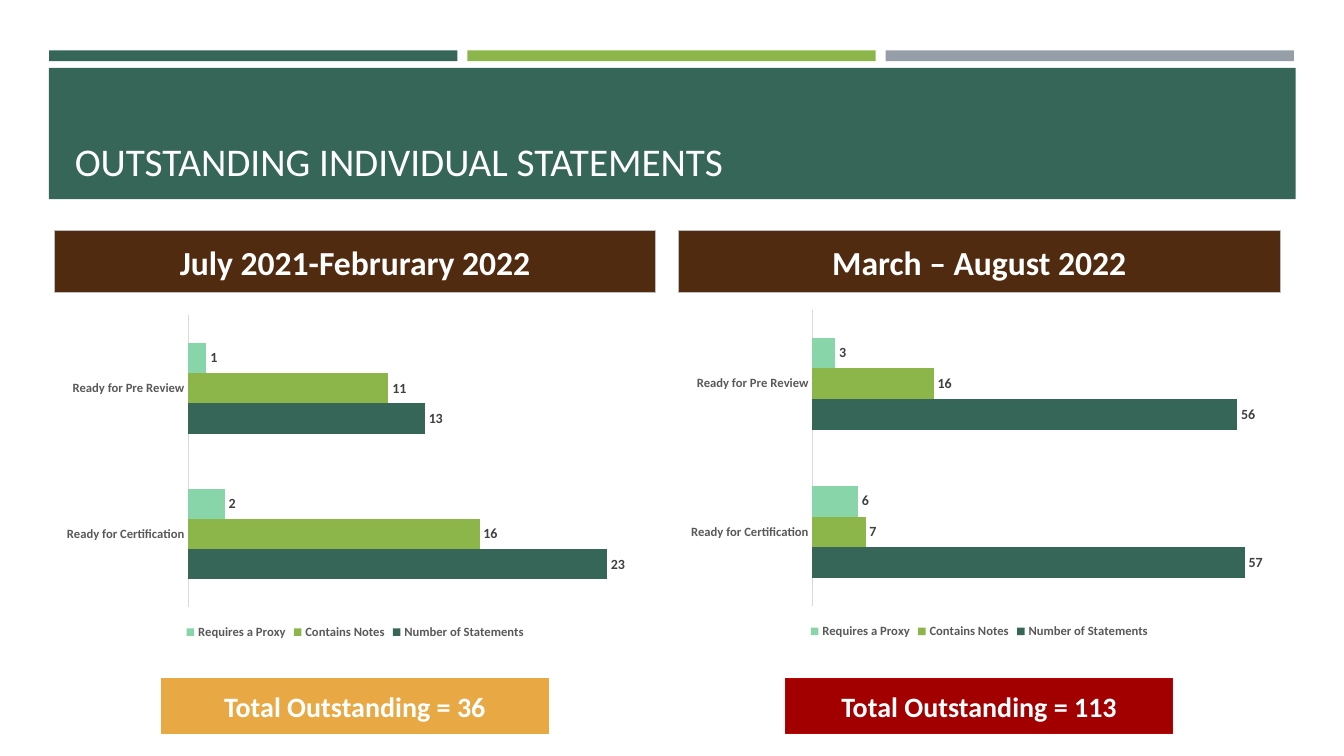
from lxml import etree
from pptx import Presentation
from pptx.chart.data import CategoryChartData
from pptx.dml.color import RGBColor
from pptx.enum.chart import XL_CHART_TYPE, XL_LABEL_POSITION, XL_LEGEND_POSITION, XL_TICK_LABEL_POSITION, XL_TICK_MARK
from pptx.enum.shapes import MSO_SHAPE
from pptx.enum.text import MSO_ANCHOR, PP_ALIGN
from pptx.oxml import parse_xml
from pptx.util import Cm, Pt

COLORS = {
    "green": "366658", "lime": "8CB64A", "mint": "88D5A9", "gray": "969FA7",
    "brown": "502B10", "amber": "E8A844", "red": "A20000", "red_line": "C00000",
    "silver": "BDBDBD", "axis": "D9D9D9", "label": "404040", "muted": "595959",
    "white": "FFFFFF",
}
FONT = "Calibri"


def set_font(font, size, color, bold=True):
    font.name, font.size, font.bold = FONT, Pt(size), bold
    font.color.rgb = RGBColor.from_string(COLORS[color])


def add_box(x, y, w, h, fill, line=None, text="", size=20):
    sp = s.shapes.add_shape(MSO_SHAPE.RECTANGLE, Cm(x), Cm(y), Cm(w), Cm(h))
    sp.shadow.inherit = False
    sp.fill.solid()
    sp.fill.fore_color.rgb = RGBColor.from_string(COLORS[fill])
    if line:
        sp.line.color.rgb = RGBColor.from_string(COLORS[line])
        sp.line.width = Pt(0.75)
    else:
        sp.line.fill.background()
    if text:
        tf = sp.text_frame
        tf.text = text
        tf.vertical_anchor = MSO_ANCHOR.MIDDLE
        p = tf.paragraphs[0]
        p.alignment = PP_ALIGN.CENTER
        set_font(p.runs[0].font, size, "white")


prs = Presentation()
prs.slide_width, prs.slide_height = Cm(33.87), Cm(19.05)
s = prs.slides.add_slide(prs.slide_layouts[5])

# Header strips and title band
for i, color in enumerate(["green", "lime", "gray"]):
    add_box(1.24 + i * 10.54, 1.27, 10.29, 0.27, color)
add_box(1.23, 1.71, 31.42, 3.31, "green")

# Title, raised above the band
title = s.shapes.title
title.left, title.top, title.width, title.height = Cm(1.63), Cm(1.96), Cm(30.63), Cm(2.82)
tf = title.text_frame
tf.text = "OUTSTANDING INDIVIDUAL STATEMENTS"
tf.vertical_anchor = MSO_ANCHOR.BOTTOM
tf.paragraphs[0].alignment = PP_ALIGN.LEFT
set_font(tf.paragraphs[0].runs[0].font, 28, "white", bold=False)
s.shapes._spTree.append(title._element)

# One column per period: heading, chart, total
CATEGORIES = ["Ready for Certification", "Ready for Pre Review"]
SERIES = [("Number of Statements", "green"), ("Contains Notes", "lime"), ("Requires a Proxy", "mint")]
PERIODS = [
    dict(x=1.37, heading="July 2021-Februrary 2022", values=[(23, 13), (16, 11), (2, 1)],
         top=7.77, height=8.46, maximum=25, total="Total Outstanding = 36", fill="amber", line="amber"),
    dict(x=17.1, heading="March – August 2022", values=[(57, 56), (7, 16), (6, 3)],
         top=7.62, height=8.59, maximum=60, total="Total Outstanding = 113", fill="red", line="red_line"),
]
WIDTH = 15.16

for period in PERIODS:
    x = period["x"]
    add_box(x, 5.82, WIDTH, 1.55, "brown", "silver", period["heading"], 24)
    add_box(x + 2.7, 17.09, 9.75, 1.4, period["fill"], period["line"], period["total"])

    data = CategoryChartData()
    data.categories = CATEGORIES
    for (name, color), values in zip(SERIES, period["values"]):
        data.add_series(name, values)
    chart = s.shapes.add_chart(XL_CHART_TYPE.BAR_CLUSTERED, Cm(x), Cm(period["top"]),
                               Cm(WIDTH), Cm(period["height"]), data).chart
    chart.has_title = False
    chart.font.name, chart.font.size = FONT, Pt(10)

    # Legend and axes
    chart.has_legend = True
    chart.legend.position = XL_LEGEND_POSITION.BOTTOM
    chart.legend.include_in_layout = False
    set_font(chart.legend.font, 9, "muted")
    axis = chart.category_axis
    axis.major_tick_mark = axis.minor_tick_mark = XL_TICK_MARK.NONE
    axis.tick_label_position = XL_TICK_LABEL_POSITION.NEXT_TO_AXIS
    axis.format.line.color.rgb = RGBColor.from_string(COLORS["axis"])
    axis.format.line.width = Pt(0.75)
    set_font(axis.tick_labels.font, 9, "muted")
    chart.value_axis.minimum_scale = 0
    chart.value_axis.maximum_scale = period["maximum"]
    chart.value_axis.has_major_gridlines = False
    chart.value_axis.visible = False

    # Bars and value labels
    plot = chart.plots[0]
    plot.gap_width = 182
    plot.vary_by_categories = False
    for series, (name, color) in zip(plot.series, SERIES):
        series.format.fill.solid()
        series.format.fill.fore_color.rgb = RGBColor.from_string(COLORS[color])
        labels = series.data_labels
        labels.show_value = True
        labels.position = XL_LABEL_POSITION.OUTSIDE_END
        set_font(labels.font, 10, "label")

    # White chart background and border
    fill = f'<a:solidFill><a:srgbClr val="{COLORS["white"]}"/></a:solidFill>'
    chart._chartSpace.chart.addnext(parse_xml(
        '<c:spPr xmlns:c="http://schemas.openxmlformats.org/drawingml/2006/chart" '
        'xmlns:a="http://schemas.openxmlformats.org/drawingml/2006/main">'
        f'{fill}<a:ln w="9525">{fill}</a:ln></c:spPr>'))

prs.save("out.pptx")
